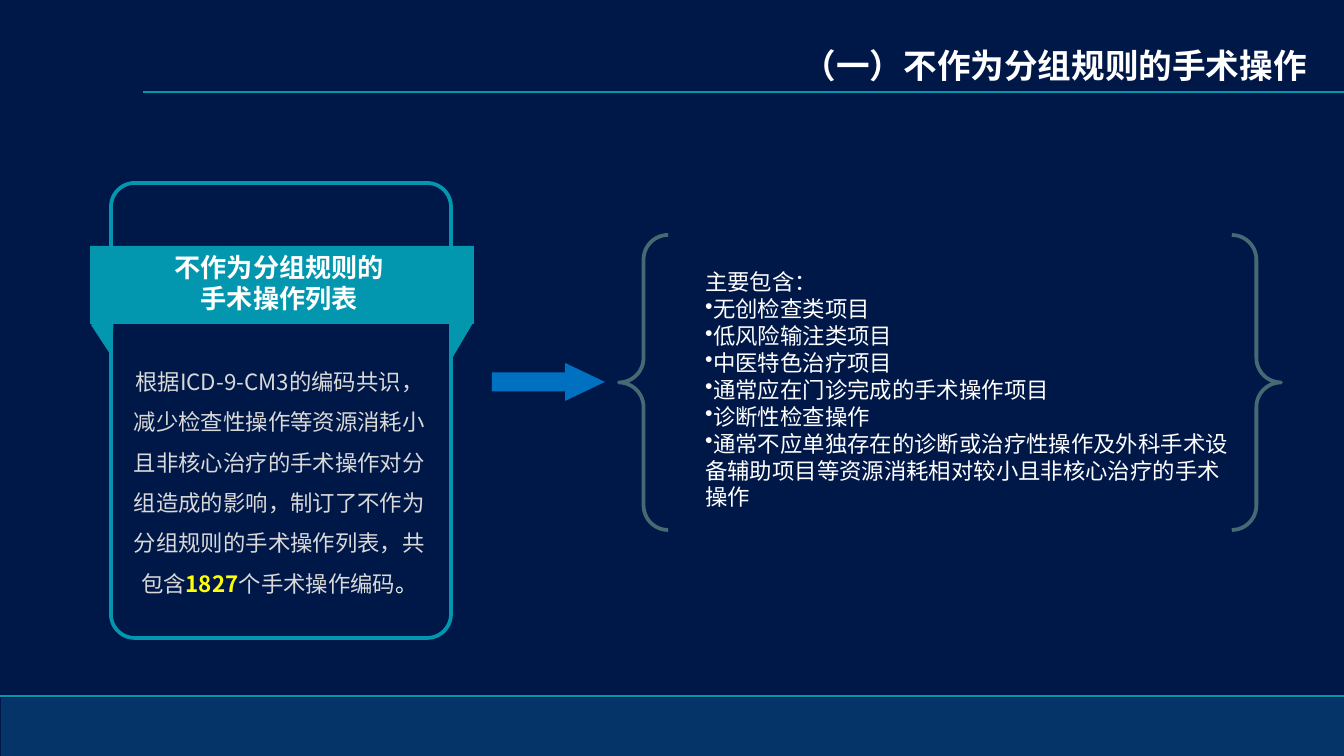
from lxml import etree
from pptx import Presentation
from pptx.dml.color import RGBColor
from pptx.enum import shapes, text
from pptx.oxml import ns
from pptx.util import Emu, Pt

PX = 914400 / 134.4
FONT = "Noto Sans CJK SC"
COLORS = {
    "navy": "001848",
    "footer": "043468",
    "teal": "0297AE",
    "blue": "0070C0",
    "brace": "456A73",
    "white": "FFFFFF",
    "grey": "D9D9D9",
    "yellow": "FFFF00",
}

deck = Presentation()
deck.slide_width, deck.slide_height = Emu(round(1344 * PX)), Emu(round(756 * PX))
page = deck.slides.add_slide(deck.slide_layouts[6])
page.background.fill.solid()
page.background.fill.fore_color.rgb = RGBColor.from_string(COLORS["navy"])


def paint(shape, fill=None, line=None):
    shape.shadow.inherit = False
    if fill:
        shape.fill.solid()
        shape.fill.fore_color.rgb = RGBColor.from_string(COLORS[fill])
    else:
        shape.fill.background()
    if line:
        shape.line.color.rgb = RGBColor.from_string(COLORS[line])
        shape.line.width = Pt(2)
    else:
        shape.line.fill.background()


def write(place, paragraphs, size, bold=False, align=text.PP_ALIGN.LEFT):
    box = page.shapes.add_textbox(*[Emu(round(n * PX)) for n in place])
    frame = box.text_frame
    frame.word_wrap = True
    for number, words in enumerate(paragraphs):
        para = frame.paragraphs[0] if number == 0 else frame.add_paragraph()
        para.alignment = align
        para.font.name = FONT
        para.font.size = Pt(size)
        para.font.bold = bold
        para.font.color.rgb = RGBColor.from_string(COLORS["white"])
        para.font._element.find(ns.qn("a:latin")).addnext(
            para.font._element.makeelement(ns.qn("a:ea"), {"typeface": FONT})
        )
        para.add_run().text = words
    return frame


kinds = shapes.MSO_SHAPE
outlines = [
    (kinds.RECTANGLE, (1, 698, 1343, 58), "footer", None),
    (kinds.ROUNDED_RECTANGLE, (111, 183, 340, 455), None, "teal"),
    (kinds.RECTANGLE, (90, 246, 384, 78), "teal", None),
    (kinds.RIGHT_ARROW, (492, 363, 113, 38), "blue", None),
    (kinds.DOUBLE_BRACE, (619, 235, 662, 295), None, "brace"),
]
for kind, place, fill, line in outlines:
    shape = page.shapes.add_shape(kind, *[Emu(round(n * PX)) for n in place])
    paint(shape, fill, line)
    if kind == kinds.ROUNDED_RECTANGLE:
        shape.adjustments[0] = 0.07
        for start, *rest in (
            [(449, 308), (473, 323), (453, 357)],
            [(114, 310), (112, 357), (91, 325)],
        ):
            builder = page.shapes.build_freeform(*start, scale=PX)
            builder.add_line_segments(rest, close=True)
            paint(builder.convert_to_shape(), "teal")
    elif kind == kinds.RIGHT_ARROW:
        shape.adjustments[1] = 1.05

for left, top, width in ((143, 92, 1), (0, 696, 1.5)):
    ends = [Emu(round(n * PX)) for n in (left, top, 1344, top)]
    rule = page.shapes.add_connector(shapes.MSO_CONNECTOR.STRAIGHT, *ends)
    rule.line.color.rgb = RGBColor.from_string(COLORS["teal"])
    rule.line.width = Pt(width)
    etree.SubElement(rule._element.spPr, ns.qn("a:effectLst"))

write((292, 38, 1028, 54), ["（一）不作为分组规则的手术操作"], 18, True, text.PP_ALIGN.RIGHT)

card = write(
    (116, 246, 327, 363),
    ["不作为分组规则的", "手术操作列表"],
    14,
    True,
    text.PP_ALIGN.CENTER,
)
card.margin_left = card.margin_right = Emu(round(9 * PX))
card.margin_top = card.margin_bottom = Emu(round(5 * PX))
para = card.add_paragraph()
para.alignment = text.PP_ALIGN.CENTER
para.line_spacing = 1.5
para.space_before = Pt(22)
for words, color in (
    (
        "根据ICD-9-CM3的编码共识，减少检查性操作等资源消耗小且非核心治疗的手术操作对分组造成的影响，"
        "制订了不作为分组规则的手术操作列表，共包含",
        "grey",
    ),
    ("1827", "yellow"),
    ("个手术操作编码", "grey"),
    ("。", "white"),
):
    span = para.add_run()
    span.text = words
    span.font.name = FONT
    span.font.size = Pt(12)
    span.font.bold = color == "yellow"
    span.font.color.rgb = RGBColor.from_string(COLORS[color])

scope = write(
    (692, 262, 573, 258),
    [
        "主要包含：",
        "无创检查类项目",
        "低风险输注类项目",
        "中医特色治疗项目",
        "通常应在门诊完成的手术操作项目",
        "诊断性检查操作",
        "通常不应单独存在的诊断或治疗性操作及外科手术设备辅助项目等资源消耗相对较小且非核心治疗的手术操作",
    ],
    12,
)
scope.margin_right = Emu(round(30 * PX))
for para in scope.paragraphs[1:]:
    settings = para._p.get_or_add_pPr()
    bullet = settings.makeelement(ns.qn("a:buChar"), {"char": "•"})
    settings.find(ns.qn("a:defRPr")).addprevious(bullet)

deck.save("out.pptx")
